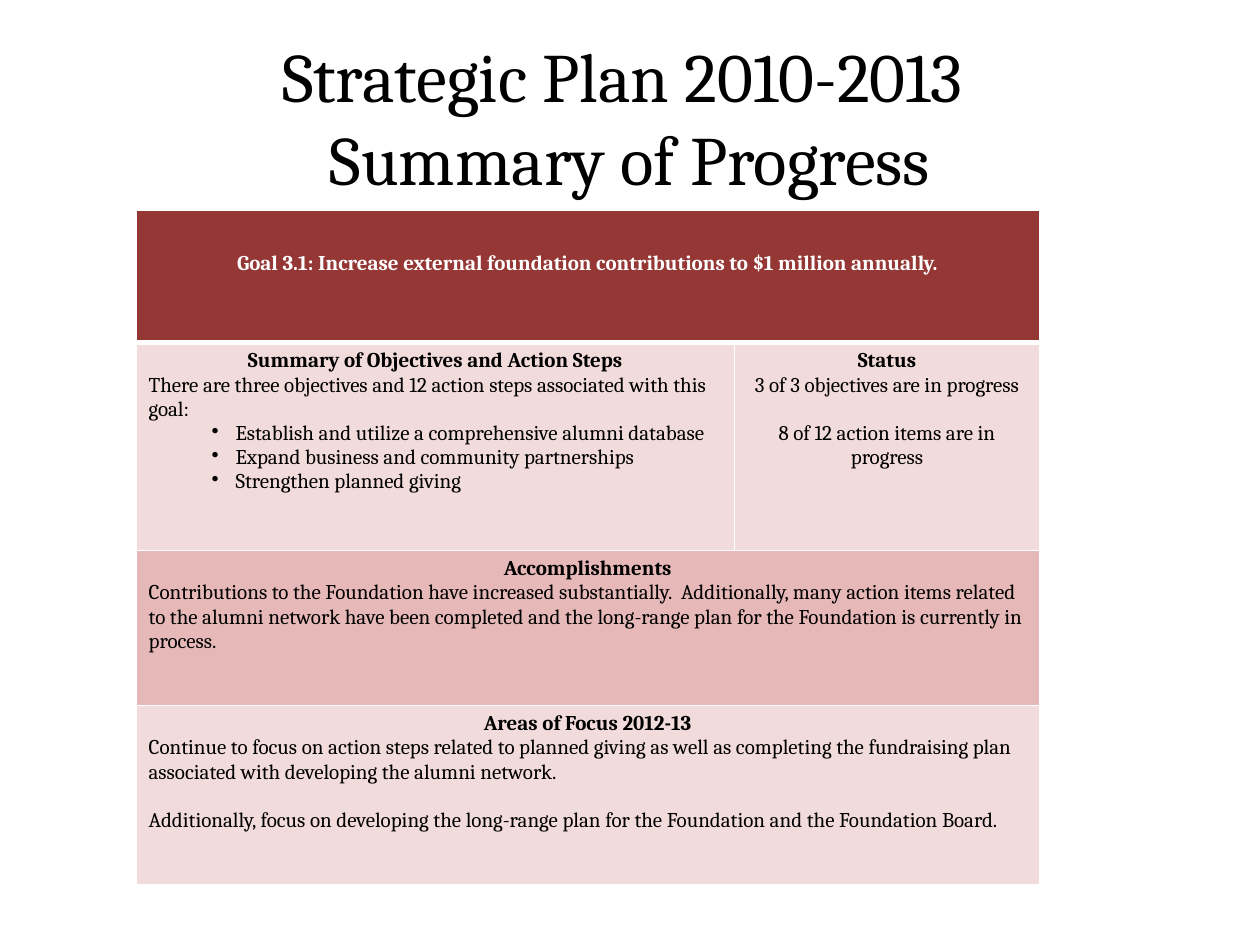
import dataclasses

import pptx
import pptx.dml.color
import pptx.enum.text
import pptx.oxml.ns
import pptx.util
from lxml import etree

Inches = pptx.util.Inches
Pt = pptx.util.Pt
ALIGN = pptx.enum.text.PP_ALIGN


@dataclasses.dataclass(frozen=True)
class Theme:
    font: str = "Cambria"
    title_size: float = 39.6
    body_size: float = 12
    paragraph_gap: float = 14
    text: str = "000000"
    light_text: str = "FFFFFF"
    border: str = "FFFFFF"
    goal_fill: str = "953735"
    light_fill: str = "F2DCDB"
    medium_fill: str = "E6B9B8"


@dataclasses.dataclass
class Line:
    """One paragraph of a table cell."""
    text: str
    bold: bool = False
    centered: bool = False
    bullet: bool = False
    gap_before: bool = False


def heading(text):
    return Line(text, bold=True, centered=True)


class SlideBuilder:
    def __init__(self, slide, theme):
        self.slide = slide
        self.theme = theme

    def add_run(self, paragraph, text, size, color, bold=False):
        run = paragraph.add_run()
        run.text = text
        run.font.name = self.theme.font
        run.font.size = Pt(size)
        run.font.bold = bold
        run.font.color.rgb = pptx.dml.color.RGBColor.from_string(color)

    def add_title(self, lines, left, top, width, height):
        title = self.slide.shapes.title
        title.left, title.top = Inches(left), Inches(top)
        title.width, title.height = Inches(width), Inches(height)
        frame = title.text_frame
        frame.auto_size = pptx.enum.text.MSO_AUTO_SIZE.NONE
        frame.vertical_anchor = pptx.enum.text.MSO_ANCHOR.MIDDLE
        paragraph = frame.paragraphs[0]
        paragraph.alignment = ALIGN.CENTER
        for index, text in enumerate(lines):
            if index:
                paragraph.add_line_break()
            self.add_run(paragraph, text, self.theme.title_size, self.theme.text)

    def add_table(self, left, top, column_widths, row_heights):
        table = self.slide.shapes.add_table(
            len(row_heights), len(column_widths), Inches(left), Inches(top),
            Inches(sum(column_widths)), Inches(sum(row_heights))).table
        table.first_row = table.horz_banding = False
        for column, width in zip(table.columns, column_widths):
            column.width = Inches(width)
        for row, height in zip(table.rows, row_heights):
            row.height = Inches(height)
        return table

    def set_borders(self, cell, top=1, bottom=1):
        properties = cell._tc.get_or_add_tcPr()
        qn = pptx.oxml.ns.qn
        for side, width in (("L", 1), ("R", 1), ("T", top), ("B", bottom)):
            line = etree.SubElement(properties, qn(f"a:ln{side}"), w=str(Pt(width)))
            fill = etree.SubElement(line, qn("a:solidFill"))
            etree.SubElement(fill, qn("a:srgbClr"), val=self.theme.border)

    def fill_cell(self, cell, color):
        cell.fill.solid()
        cell.fill.fore_color.rgb = pptx.dml.color.RGBColor.from_string(color)

    def set_bullet(self, paragraph):
        paragraph.level = 1
        properties = paragraph._p.get_or_add_pPr()
        properties.set("marL", str(Inches(0.69)))
        properties.set("indent", str(Inches(-0.19)))
        etree.SubElement(properties, pptx.oxml.ns.qn("a:buChar"), char="•")

    def write_cell(self, cell, lines, color):
        frame = cell.text_frame
        for index, line in enumerate(lines):
            paragraph = frame.add_paragraph() if index else frame.paragraphs[0]
            paragraph.alignment = ALIGN.CENTER if line.centered else ALIGN.LEFT
            if line.gap_before:
                paragraph.space_before = Pt(self.theme.paragraph_gap)
            if line.bullet:
                self.set_bullet(paragraph)
            self.add_run(paragraph, line.text, self.theme.body_size, color, line.bold)


def main():
    theme = Theme()
    presentation = pptx.Presentation()
    presentation.slide_width = Inches(10)
    presentation.slide_height = Inches(7.5)
    slide = presentation.slides.add_slide(presentation.slide_layouts[5])
    builder = SlideBuilder(slide, theme)
    builder.add_title(["Strategic Plan 2010-2013 ", "Summary of Progress"], 0.5, 0.3, 9, 1.25)

    goal = [heading("Goal 3.1: Increase external foundation contributions to $1 million annually.")]
    objectives = [
        heading("Summary of Objectives and Action Steps"),
        Line("There are three objectives and 12 action steps associated with this goal:"),
        Line("Establish and utilize a comprehensive alumni database", bullet=True),
        Line("Expand business and community partnerships", bullet=True),
        Line("Strengthen planned giving", bullet=True),
    ]
    status = [
        heading("Status"),
        Line("3 of 3 objectives are in progress", centered=True),
        Line("8 of 12 action items are in progress", centered=True, gap_before=True),
    ]
    accomplishments = [
        heading("Accomplishments"),
        Line("Contributions to the Foundation have increased substantially.  Additionally, "
             "many action items related to the alumni network have been completed and the "
             "long-range plan for the Foundation is currently in process."),
    ]
    focus = [
        heading("Areas of Focus 2012-13"),
        Line("Continue to focus on action steps related to planned giving as well as completing "
             "the fundraising plan associated with developing the alumni network."),
        Line("Additionally, focus on developing the long-range plan for the Foundation "
             "and the Foundation Board.", gap_before=True),
    ]
    rows = [
        ([goal], theme.goal_fill, theme.light_text),
        ([objectives, status], theme.light_fill, theme.text),
        ([accomplishments], theme.medium_fill, theme.text),
        ([focus], theme.light_fill, theme.text),
    ]

    table = builder.add_table(1.08, 1.67, [4.75, 2.42], [1.05, 1.65, 1.23, 1.42])
    for row_index, (contents, fill, color) in enumerate(rows):
        cells = [table.cell(row_index, column) for column in range(2)]
        for cell in cells:
            builder.set_borders(cell, top=3 if row_index == 1 else 1,
                                bottom=3 if row_index == 0 else 1)
            builder.fill_cell(cell, fill)
        if len(contents) == 1:
            cells[0].merge(cells[1])
        for cell, lines in zip(cells, contents):
            builder.write_cell(cell, lines, color)
    table.cell(0, 0).margin_top = Inches(0.33)

    presentation.save("out.pptx")


if __name__ == "__main__":
    main()
